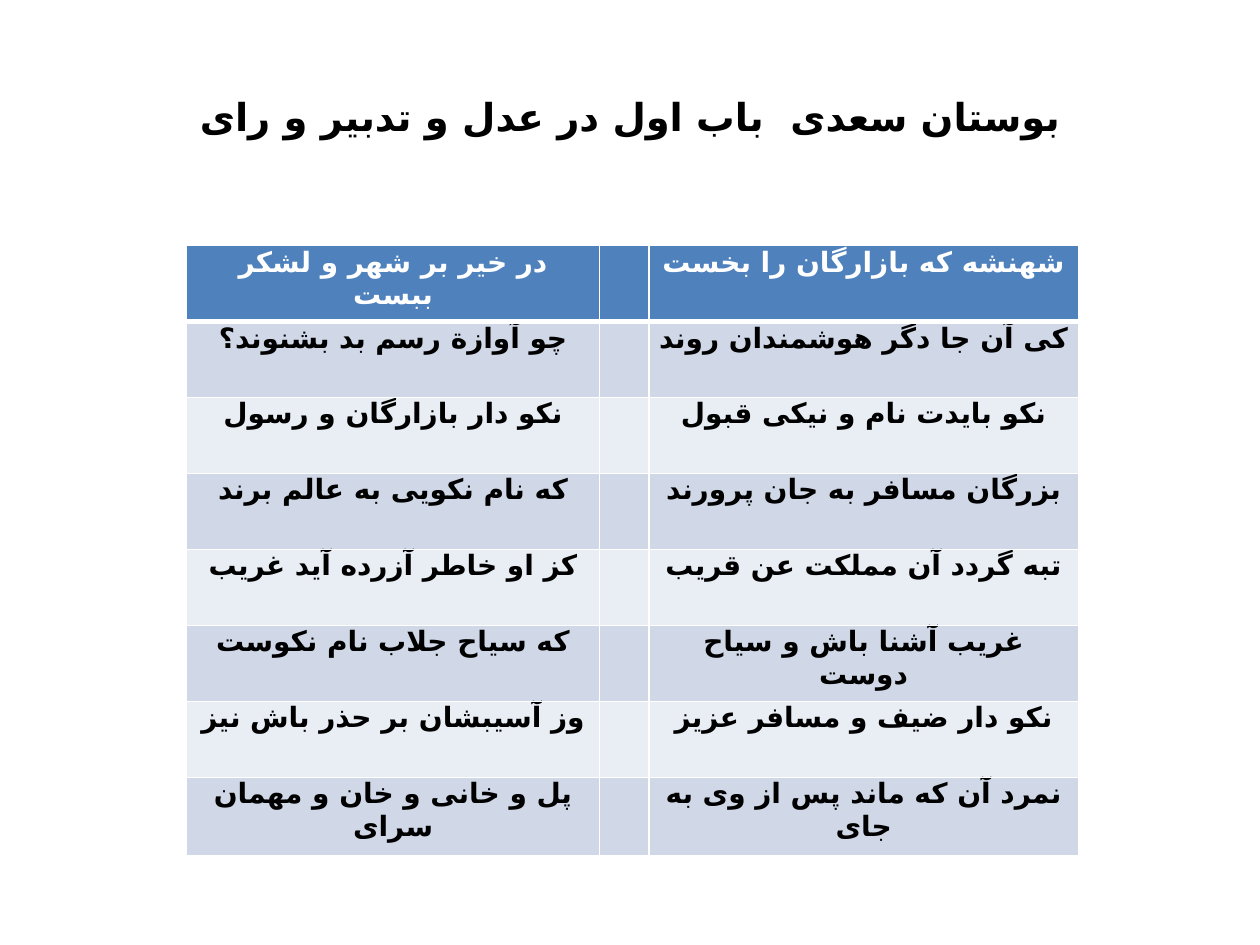
"""Build a slide with verses from Saadi's Bustan in a two-column table."""
from lxml.etree import SubElement
from pptx import Presentation
from pptx.dml.color import RGBColor as Color
from pptx.enum.text import MSO_ANCHOR as Anchor, PP_ALIGN as Align
from pptx.oxml.ns import qn
from pptx.util import Inches, Pt

COLORS = {"ink": "000000", "header": "4F81BD", "header_text": "FFFFFF",
          "rule": "FFFFFF", "odd": "D0D8E8", "even": "E9EDF4"}
TITLE = "بوستان سعدی  باب اول در عدل و تدبیر و رای"
VERSES = [
    ("شهنشه که بازارگان را بخست", ["در خیر بر شهر و لشکر ببست"]),
    ("کی آن جا دگر هوشمندان روند", ["چو آوازة ", "رسم بد بشنوند؟"]),
    ("نکو بایدت نام و نیکی قبول", ["نکو دار بازارگان و رسول"]),
    ("بزرگان مسافر به جان پرورند", ["که نام نکویی به عالم برند"]),
    ("تبه گردد آن مملکت عن قریب", ["کز او خاطر آزرده آید غریب"]),
    ("غریب آشنا باش و سیاح دوست", ["که سیاح جلاب نام نکوست"]),
    ("نکو دار ضیف و مسافر عزیز", ["وز آسیبشان بر حذر باش نیز"]),
    ("نمرد آن که ماند پس از وی به جای", ["پل و خانی و خان و مهمان سرای"]),
]
COLUMN_WIDTHS = [3.28, 0.39, 3.41]
TABLE_HEIGHT, LAST_HEIGHT = 4.84, 0.62


class VerseSlide:
    """Hold the slide and its text style."""

    title_font, verse_font, second_font = "Calibri", "Lato", "Noto Sans Mono"
    script_font = "DejaVu Sans"

    def __init__(self, deck):
        self.slide = deck.slides.add_slide(deck.slide_layouts[5])

    def style(self, span, font, size, color):
        span.font.name, span.font.size, span.font.bold = font, Pt(size), True
        span.font.color.rgb = Color.from_string(COLORS[color])
        SubElement(span.font._element, qn("a:cs")).set("typeface", self.script_font)

    def title(self, text, left, top, width, height):
        box = self.slide.shapes.title
        box.left, box.top = Inches(left), Inches(top)
        box.width, box.height = Inches(width), Inches(height)
        box.text_frame.text = text
        box.text_frame.vertical_anchor = Anchor.MIDDLE
        para = box.text_frame.paragraphs[0]
        para.alignment = Align.CENTER
        para._p.get_or_add_pPr().set("rtl", "1")
        self.style(para.runs[0], self.title_font, 22, "ink")

    def cell(self, cell, parts, color):
        cell.margin_left = cell.margin_right = Inches(0.07)
        cell.margin_top = cell.margin_bottom = 0
        para = cell.text_frame.paragraphs[0]
        para.alignment, para.line_spacing = Align.CENTER, Pt(18.8)
        for part, font in zip(parts, (self.verse_font, self.second_font)):
            span = para.add_run()
            span.text = part
            self.style(span, font, 16, color)

    def rule(self, cell, side, points):
        properties = cell._tc.get_or_add_tcPr()
        line = SubElement(properties, qn(f"a:{side}"), w=str(Pt(points)))
        fill = SubElement(line, qn("a:solidFill"))
        SubElement(fill, qn("a:srgbClr"), val=COLORS["rule"])

    def table(self, verses, left, top):
        frame = self.slide.shapes.add_table(
            len(verses), len(COLUMN_WIDTHS), Inches(left), Inches(top),
            Inches(sum(COLUMN_WIDTHS)), Inches(TABLE_HEIGHT))
        table = frame.table
        row_height = (TABLE_HEIGHT - LAST_HEIGHT) / (len(verses) - 1)
        for column, width in zip(table.columns, COLUMN_WIDTHS):
            column.width = Inches(width)
        for index, (first, second) in enumerate(verses):
            row = table.rows[index]
            last = index == len(verses) - 1
            row.height = Inches(LAST_HEIGHT if last else row_height)
            fill = "header" if index == 0 else "odd" if index % 2 else "even"
            for cell in row.cells:
                for side in ("lnL", "lnR", "lnT", "lnB"):
                    thick = (index, side) in ((0, "lnB"), (1, "lnT"))
                    self.rule(cell, side, 3 if thick else 1)
                cell.fill.solid()
                cell.fill.fore_color.rgb = Color.from_string(COLORS[fill])
            color = "ink" if index else "header_text"
            self.cell(row.cells[0], second, color)
            self.cell(row.cells[2], [first], color)


def main():
    deck = Presentation()
    deck.slide_width, deck.slide_height = Inches(10), Inches(7.5)
    page = VerseSlide(deck)
    page.title(TITLE, 0.5, 0.3, 9, 1.25)
    page.table(VERSES, 1.48, 1.95)
    deck.save("out.pptx")


if __name__ == "__main__":
    main()
